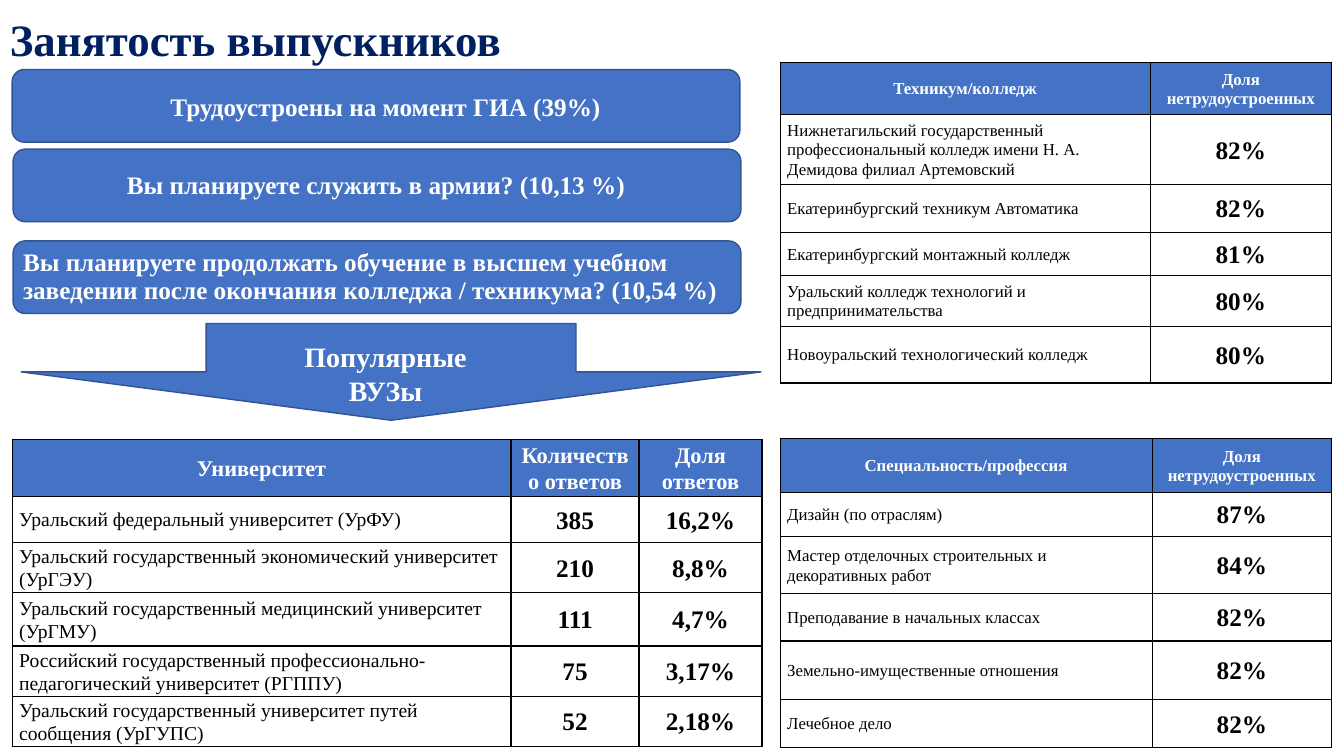
"""Build the slide on graduate employment: survey answers, popular universities and two tables."""
from lxml import etree
from pptx import Presentation
from pptx import util as u
from pptx.dml.color import RGBColor
from pptx.enum import shapes, text
from pptx.oxml.ns import qn

BLUE = RGBColor(0x44, 0x72, 0xC4)
EDGE = RGBColor(0x32, 0x54, 0x91)
NAVY = RGBColor(0x00, 0x20, 0x60)
WHITE = RGBColor(0xFF, 0xFF, 0xFF)
BLACK = RGBColor(0x00, 0x00, 0x00)
LEFT, CENTER, JUSTIFY = text.PP_ALIGN.LEFT, text.PP_ALIGN.CENTER, text.PP_ALIGN.JUSTIFY
TOP, MIDDLE = text.MSO_ANCHOR.TOP, text.MSO_ANCHOR.MIDDLE
FONT = "Times New Roman"
CELL = u.Inches(0.1)


def grid(*cells):
    """Turn grid columns and rows into lengths."""
    return [round(n * CELL) for n in cells]


def write(tf, words, size, color, bold=True, align=LEFT, spacing=1.0, after=0):
    """Put one run of text into a frame."""
    p = tf.paragraphs[0]
    p.alignment, p.line_spacing, p.space_after = align, spacing, u.Pt(after)
    r = p.add_run()
    r.text = words
    r.font.name, r.font.size, r.font.bold = FONT, u.Pt(size), bold
    r.font.color.rgb = color


prs = Presentation()
prs.slide_width, prs.slide_height = grid(133.33, 75)
s = prs.slides.add_slide(prs.slide_layouts[6])

panel = shapes.MSO_SHAPE.ROUNDED_RECTANGLE
arrow = shapes.MSO_SHAPE.DOWN_ARROW
for kind, place in [
    (panel, (1.3, 23.9, 72.2, 7.2)),
    (panel, (1.3, 14.8, 72.2, 7.2)),
    (panel, (1.2, 6.9, 72.2, 7.2)),
    (arrow, (2.1, 32.1, 73.4, 9.6)),
]:
    sp = s.shapes.add_shape(kind, *grid(*place))
    sp.shadow.inherit = False
    sp.fill.solid()
    sp.fill.fore_color.rgb = BLUE
    sp.line.color.rgb = EDGE
    sp.line.width = u.Pt(1)

for place, words, size, color, align, spacing, anchor in [
    ((1.3, 22.9, 72.2, 9.2),
     "Вы планируете продолжать обучение в высшем учебном заведении "
     "после окончания колледжа / техникума? (10,54 %)", 18, WHITE, LEFT, 0.9, MIDDLE),
    ((10.6, 15.8, 53.4, 5.3), "Вы планируете служить в армии? (10,13 %)",
     18, WHITE, CENTER, 0.9, MIDDLE),
    ((25.7, 33.2, 25.1, 7.7), "Популярные ВУЗы", 20, WHITE, CENTER, 1.0, TOP),
    ((0, 0, 133.3, 8.4), "Занятость выпускников", 32, NAVY, JUSTIFY, 0.9, MIDDLE),
    ((13.7, 8.1, 49.1, 5.3), "Трудоустроены на момент ГИА (39%)",
     18, WHITE, CENTER, 0.9, MIDDLE),
]:
    tf = s.shapes.add_textbox(*grid(*place)).text_frame
    tf.word_wrap = True
    tf.vertical_anchor = anchor
    write(tf, words, size, color, True, align, spacing)

universities = [
    ("Университет", "Количество ответов", "Доля ответов"),
    ("Уральский федеральный университет (УрФУ)", "385", "16,2%"),
    ("Уральский государственный экономический университет (УрГЭУ)", "210", "8,8%"),
    ("Уральский государственный медицинский университет (УрГМУ)", "111", "4,7%"),
    ("Российский государственный профессионально-педагогический университет (РГППУ)",
     "75", "3,17%"),
    ("Уральский государственный университет путей сообщения (УрГУПС)", "52", "2,18%"),
]
colleges = [
    ("Техникум/колледж", "Доля нетрудоустроенных"),
    ("Нижнетагильский государственный профессиональный колледж имени "
     "Н. А. Демидова филиал Артемовский", "82%"),
    ("Екатеринбургский техникум Автоматика", "82%"),
    ("Екатеринбургский монтажный колледж", "81%"),
    ("Уральский колледж технологий и предпринимательства", "80%"),
    ("Новоуральский технологический колледж", "80%"),
]
specialties = [
    ("Специальность/профессия", "Доля нетрудоустроенных"),
    ("Дизайн (по отраслям)", "87%"),
    ("Мастер отделочных строительных и декоративных работ", "84%"),
    ("Преподавание в начальных классах", "82%"),
    ("Земельно-имущественные отношения", "82%"),
    ("Лечебное дело", "82%"),
]

for rows, corner, widths, heights, head_size, name_size, name_after, value_after in [
    (universities, (1.2, 43.6), (49.5, 12.7, 12.2), (4.6, 4.6, 4.6, 5.3, 5, 4.8), 16, 14, 0, 0),
    (colleges, (7.74 * 10, 6.2), (36.7, 18), (5.2, 6.9, 4.8, 4.2, 5.1, 5.6), 12, 12, 0, 8),
    (specialties, (77.4, 43.5), (36.9, 17.8), (5.4, 4.3, 5.7, 4.7, 5.8, 4.8), 12, 12, 8, 0),
]:
    size = grid(sum(widths), sum(heights))
    tbl = s.shapes.add_table(len(rows), len(widths), *grid(*corner), *size).table
    tbl.first_row = tbl.horz_banding = False
    for col, width in zip(tbl.columns, grid(*widths)):
        col.width = width
    for row, height in zip(tbl.rows, grid(*heights)):
        row.height = height
    for i, row in enumerate(rows):
        for j, words in enumerate(row):
            cell = tbl.cell(i, j)
            cell.vertical_anchor = MIDDLE
            cell.margin_left = cell.margin_right = u.Inches(0.07)
            cell.margin_top = cell.margin_bottom = 0
            for side in ("a:lnL", "a:lnR", "a:lnT", "a:lnB"):
                ln = etree.SubElement(cell._tc.get_or_add_tcPr(), qn(side), w=str(u.Pt(1)))
                fill = etree.SubElement(ln, qn("a:solidFill"))
                etree.SubElement(fill, qn("a:srgbClr"), val=str(BLACK))
            cell.fill.solid()
            cell.fill.fore_color.rgb = WHITE if i else BLUE
            if i == 0:
                write(cell.text_frame, words, head_size, WHITE, True, CENTER, 1.06)
            elif j == 0:
                write(cell.text_frame, words, name_size, BLACK, False, LEFT, 1.06, name_after)
            else:
                write(cell.text_frame, words, 18, BLACK, True, CENTER, 1.06, value_after)

prs.save("out.pptx")
